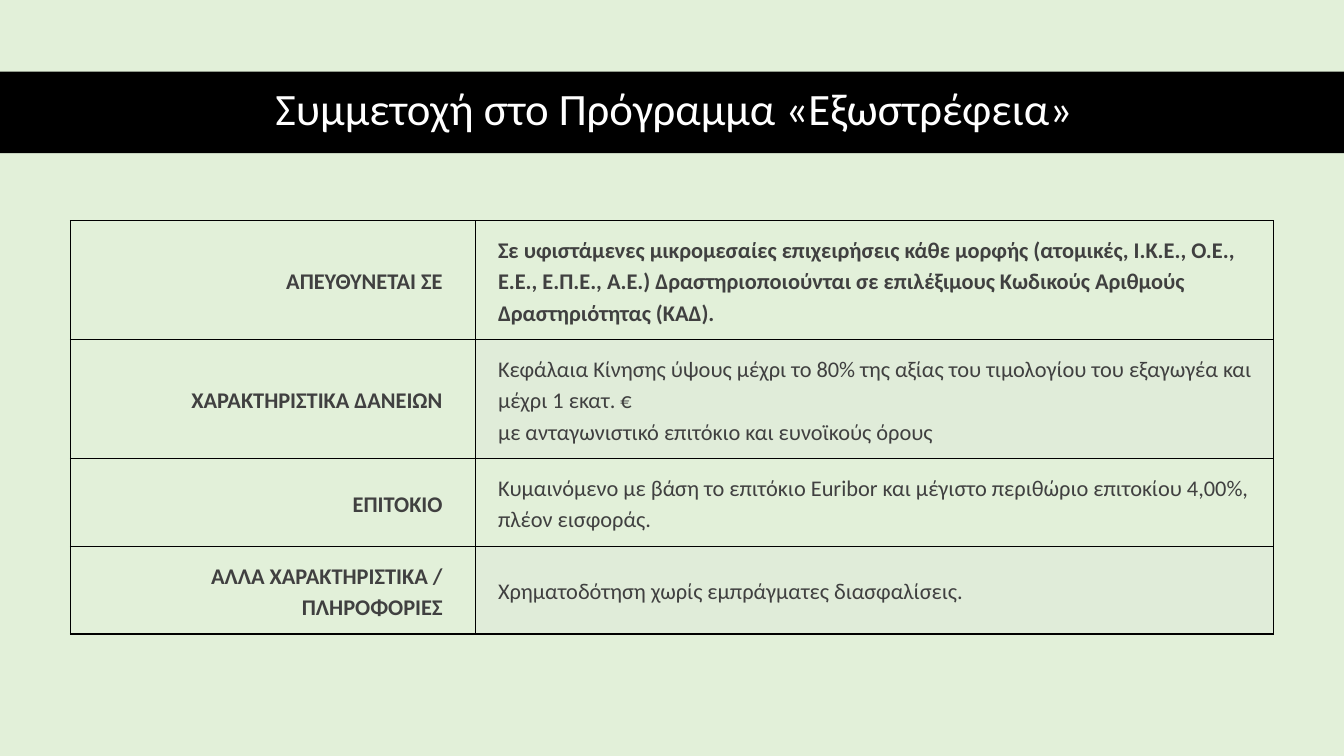
from lxml import etree
from pptx import Presentation
from pptx.dml.color import RGBColor
from pptx.enum.shapes import MSO_SHAPE
from pptx.enum.text import MSO_ANCHOR, PP_ALIGN
from pptx.oxml.ns import qn
from pptx.util import Inches, Pt

RECTANGLE = MSO_SHAPE.RECTANGLE
MIDDLE = MSO_ANCHOR.MIDDLE
LEFT, CENTER, RIGHT = PP_ALIGN.LEFT, PP_ALIGN.CENTER, PP_ALIGN.RIGHT

FONT = "Calibri"
COLORS = {
    "background": "E2F0D9",
    "band": "000000",
    "title": "FFFFFF",
    "text": "404040",
    "border": "000000",
    "shade": "D8DEDC",
}


def add_text(paragraph, text, size, color, bold, align, spacing):
    paragraph.alignment = align
    paragraph.line_spacing = spacing
    run = paragraph.add_run()
    run.text = text
    run.font.name = FONT
    run.font.size = Pt(size)
    run.font.bold = bold
    run.font.color.rgb = RGBColor.from_string(COLORS[color])


def add_borders(cell):
    properties = cell._tc.get_or_add_tcPr()
    for side in ("lnL", "lnR", "lnT", "lnB"):
        line = etree.SubElement(properties, qn(f"a:{side}"), w=str(Pt(1)))
        fill = etree.SubElement(line, qn("a:solidFill"))
        etree.SubElement(fill, qn("a:srgbClr"), val=COLORS["border"])


prs = Presentation()
prs.slide_width, prs.slide_height = Inches(13.33), Inches(7.5)
slide = prs.slides.add_slide(prs.slide_layouts[6])
slide.background.fill.solid()
slide.background.fill.fore_color.rgb = RGBColor.from_string(COLORS["background"])

# Title band
band = slide.shapes.add_shape(RECTANGLE, 0, Inches(0.71), Inches(13.33), Inches(0.81))
band.shadow.inherit = False
band.fill.solid()
band.fill.fore_color.rgb = RGBColor.from_string(COLORS["band"])
band.line.fill.background()

title = slide.shapes.add_textbox(Inches(0.61), Inches(0.7), Inches(12.26), Inches(0.81))
title.text_frame.word_wrap = True
title.text_frame.vertical_anchor = MIDDLE
add_text(title.text_frame.paragraphs[0], "Συμμετοχή στο Πρόγραμμα «Εξωστρέφεια» ",
         32, "title", False, CENTER, 0.9)

# Programme terms: row height, label, description paragraphs
terms = [
    (1.18, "ΑΠΕΥΘΥΝΕΤΑΙ ΣΕ",
     ["Σε υφιστάμενες μικρομεσαίες επιχειρήσεις κάθε μορφής (ατομικές, Ι.Κ.Ε., Ο.Ε., "
      "Ε.Ε., Ε.Π.Ε., Α.Ε.) Δραστηριοποιούνται σε επιλέξιμους Κωδικούς Αριθμούς "
      "Δραστηριότητας (ΚΑΔ)."]),
    (1.18, "ΧΑΡΑΚΤΗΡΙΣΤΙΚΑ ΔΑΝΕΙΩΝ",
     ["Κεφάλαια Κίνησης ύψους μέχρι το 80% της αξίας του τιμολογίου του εξαγωγέα "
      "και μέχρι 1 εκατ. €",
      "με ανταγωνιστικό επιτόκιο και ευνοϊκούς όρους"]),
    (0.87, "ΕΠΙΤΟΚΙΟ",
     ["Κυμαινόμενο με βάση το επιτόκιο Euribor και μέγιστο περιθώριο επιτοκίου "
      "4,00%, πλέον εισφοράς."]),
    (0.87, "ΑΛΛΑ ΧΑΡΑΚΤΗΡΙΣΤΙΚΑ / ΠΛΗΡΟΦΟΡΙΕΣ",
     ["Χρηματοδότηση χωρίς εμπράγματες διασφαλίσεις."]),
]
terms_table = slide.shapes.add_table(
    len(terms), 2, Inches(0.7), Inches(2.19), Inches(11.93), Inches(4.1)).table
terms_table.first_row = False
terms_table.horz_banding = False
for column, width in zip(terms_table.columns, (4.02, 7.91)):
    column.width = Inches(width)

for row, (height, label, description) in enumerate(terms):
    terms_table.rows[row].height = Inches(height)
    columns = [([label], True, RIGHT, 0.33), (description, row == 0, LEFT, 0.11)]
    for col, (paragraphs, bold, align, right_margin) in enumerate(columns):
        cell = terms_table.cell(row, col)
        cell.vertical_anchor = MIDDLE
        cell.margin_left, cell.margin_right = Inches(0.22), Inches(right_margin)
        cell.margin_top = cell.margin_bottom = Inches(0.11)
        add_borders(cell)

        # Every second description is lightly shaded
        if col == 1 and row % 2 == 1:
            cell.fill.solid()
            cell.fill.fore_color.rgb = RGBColor.from_string(COLORS["shade"])
            shade = cell._tc.tcPr.find(qn("a:solidFill")).find(qn("a:srgbClr"))
            etree.SubElement(shade, qn("a:alpha"), val="20000")
        else:
            cell.fill.background()

        for index, text in enumerate(paragraphs):
            frame = cell.text_frame
            paragraph = frame.add_paragraph() if index else frame.paragraphs[0]
            add_text(paragraph, text, 16, "text", bold, align, 1.15)

prs.save("out.pptx")
